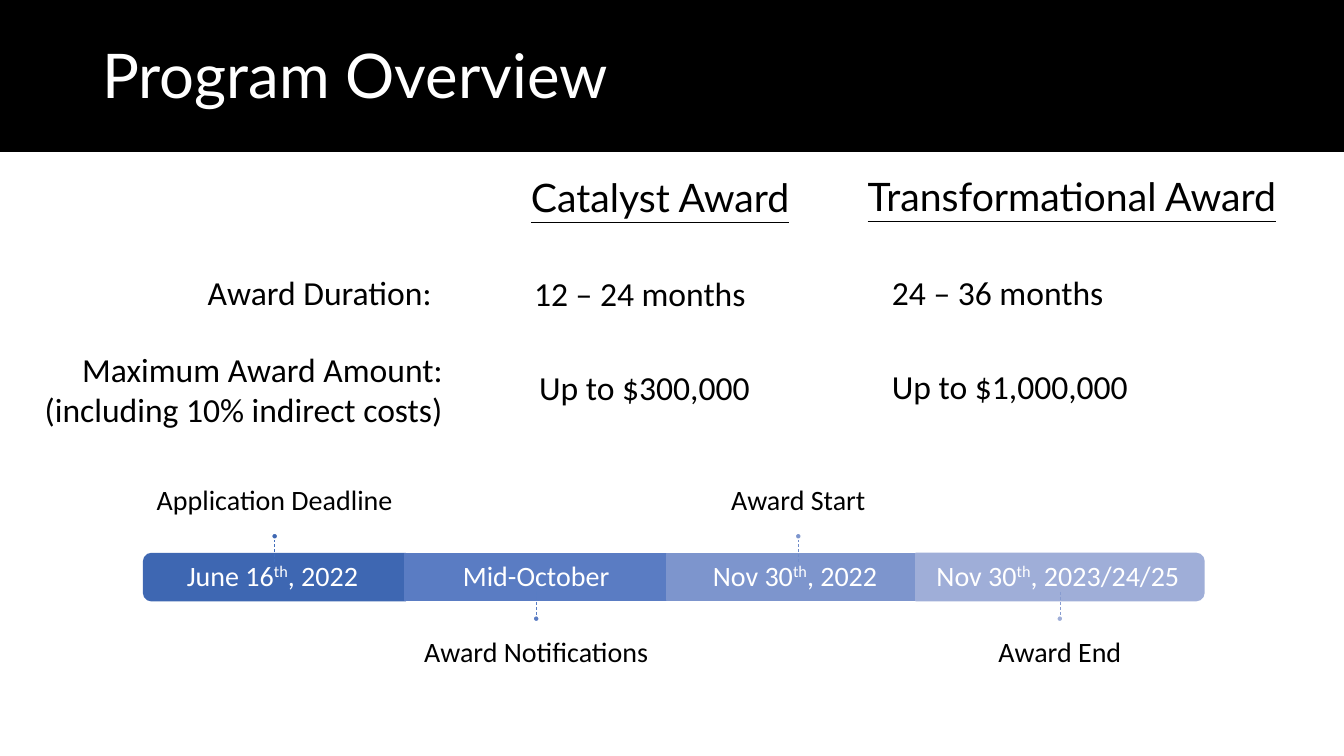
import dataclasses

import lxml.etree
import pptx
import pptx.dml.color
import pptx.enum.dml
import pptx.enum.shapes
import pptx.enum.text
import pptx.oxml.ns
import pptx.util

Pt = pptx.util.Pt
Align = pptx.enum.text.PP_ALIGN
Anchor = pptx.enum.text.MSO_ANCHOR
Preset = pptx.enum.shapes.MSO_SHAPE

COLOURS = {
    "black": "000000", "white": "FFFFFF",
    "june": "3E67B2", "october": "5A7CC3", "november": "7D95CD", "end": "9FAED8",
    "june_stem": "416DBB", "october_stem": "587CC3",
    "november_stem": "708CC9", "end_stem": "879CD0",
}
BAR_TOP, BAR_HEIGHT = 395.3, 33.8
LABEL_WIDTH, LABEL_HEIGHT = 311.8, 73.4
STEM_LENGTH, DOT_SIZE = 17, 4.3
INSET = 12


@dataclasses.dataclass(frozen=True)
class Frame:
    left: float
    top: float
    width: float
    height: float

    def lengths(self) -> tuple:
        return Pt(self.left), Pt(self.top), Pt(self.width), Pt(self.height)


@dataclasses.dataclass(frozen=True)
class Style:
    size: float = 24
    font: str = "Calibri"
    colour: str = "black"
    underline: bool = False
    align: int = Align.LEFT
    anchor: int = Anchor.TOP
    spacing: float = 1.0
    insets: tuple = (7.2, 3.6, 7.2, 3.6)


@dataclasses.dataclass(frozen=True)
class Milestone:
    """One bar segment; date holds the text before, in and after a superscript."""
    colour: str
    left: float
    width: float
    date: tuple
    date_left: float
    date_width: float
    label: str
    above: bool
    rotation: int = 0


HEADING = Style(28, "Lato", underline=True)
VALUE = Style()
ROW_NAME = Style(align=Align.RIGHT)
DATE = Style(20, colour="white", align=Align.CENTER, anchor=Anchor.MIDDLE,
             spacing=0.9, insets=(INSET,) * 4)
LABEL_ABOVE = Style(20, align=Align.CENTER, anchor=Anchor.BOTTOM,
                    spacing=0.9, insets=(0, 0, 0, INSET))
LABEL_BELOW = Style(20, align=Align.CENTER, spacing=0.9, insets=(0, INSET, 0, 0))

AWARD_TEXTS = [
    (Frame(372.2, 120.2, 209.5, 41), HEADING, ["Catalyst Award"]),
    (Frame(612.7, 119.5, 320.4, 41), HEADING, ["Transformational Award"]),
    (Frame(78.5, 190.8, 236.9, 36), ROW_NAME, ["Award Duration:"]),
    (Frame(22.3, 245.5, 301, 65.5), ROW_NAME,
     ["Maximum Award Amount:", "(including 10% indirect costs)"]),
    (Frame(374.4, 191.5, 195, 36), VALUE, ["12 – 24 months"]),
    (Frame(630, 190.8, 195, 36), VALUE, ["24 – 36 months"]),
    (Frame(378, 258.5, 188, 36), VALUE, ["Up to $300,000"]),
    (Frame(630, 257.8, 223.2, 36), VALUE, ["Up to $1,000,000"]),
]
MILESTONES = [
    Milestone("june", 102.6, 187.2, ("June 16", "th", ", 2022 "), 104.4, 185,
              "Application Deadline", True, 270),
    Milestone("october", 289.4, 187.2, ("Mid-October",), 289.4, 187.2,
              "Award Notifications", False),
    Milestone("november", 476.6, 187.2, ("Nov 30", "th", ", 2022 "), 476.6, 187.2,
              "Award Start", True),
    Milestone("end", 654.1, 205.9, ("Nov 30", "th", ", 2023/24/25"), 653.8, 203.8,
              "Award End", False, 90),
]


def rgb(name: str) -> pptx.dml.color.RGBColor:
    return pptx.dml.color.RGBColor.from_string(COLOURS[name])


def write_text(box, style: Style, paragraphs: list) -> None:
    """Fill a box; each paragraph is a tuple whose second run is superscript."""
    frame = box.text_frame
    frame.word_wrap = True
    frame.auto_size = pptx.enum.text.MSO_AUTO_SIZE.NONE
    frame.vertical_anchor = style.anchor
    (frame.margin_left, frame.margin_top,
     frame.margin_right, frame.margin_bottom) = map(Pt, style.insets)
    for number, pieces in enumerate(paragraphs):
        para = frame.add_paragraph() if number else frame.paragraphs[0]
        para.alignment = style.align
        para.line_spacing = style.spacing
        for position, piece in enumerate(pieces):
            span = para.add_run()
            span.text = piece
            span.font.size = Pt(style.size)
            span.font.name = style.font
            span.font.color.rgb = rgb(style.colour)
            if style.underline:
                span.font.underline = True
            if position == 1:
                span._r.get_or_add_rPr().set("baseline", "30000")


def add_text(page, frame: Frame, style: Style, paragraphs: list) -> None:
    write_text(page.shapes.add_textbox(*frame.lengths()), style, paragraphs)


def add_block(page, preset: int, frame: Frame, fill: str, outline: str):
    block = page.shapes.add_shape(preset, *frame.lengths())
    block.shadow.inherit = False
    block.fill.solid()
    block.fill.fore_color.rgb = rgb(fill)
    block.line.color.rgb = rgb(outline)
    block.line.width = Pt(1)
    return block


def add_stem(page, x: float, top: float, colour: str) -> None:
    stem = page.shapes.add_connector(pptx.enum.shapes.MSO_CONNECTOR.STRAIGHT,
                                     Pt(x), Pt(top), Pt(x), Pt(top + STEM_LENGTH))
    stem.line.color.rgb = rgb(colour)
    stem.line.width = Pt(0.5)
    stem.line.dash_style = pptx.enum.dml.MSO_LINE.DASH
    lxml.etree.SubElement(stem._element.spPr, pptx.oxml.ns.qn("a:effectLst"))


def add_segment(page, item: Milestone) -> None:
    """Draw a bar segment; end segments are upright shapes turned on their side."""
    frame = Frame(item.left, BAR_TOP, item.width, BAR_HEIGHT)
    preset = Preset.RECTANGLE
    if item.rotation:
        shift = (item.width - BAR_HEIGHT) / 2
        frame = Frame(item.left + shift, BAR_TOP - shift, BAR_HEIGHT, item.width)
        preset = Preset.ROUND_2_SAME_RECTANGLE
    segment = add_block(page, preset, frame, item.colour, item.colour)
    segment.rotation = item.rotation


def add_milestone(page, item: Milestone) -> None:
    centre = item.left + item.width / 2
    if item.above:
        label_top, label_style, stem_top = 307.4, LABEL_ABOVE, 385.2
        dot_top = stem_top - DOT_SIZE
    else:
        label_top, label_style, stem_top = 444.2, LABEL_BELOW, 422.8
        dot_top = stem_top + STEM_LENGTH
    add_segment(page, item)
    add_text(page, Frame(item.date_left, BAR_TOP, item.date_width, BAR_HEIGHT),
             DATE, [item.date])
    add_text(page, Frame(centre - LABEL_WIDTH / 2, label_top, LABEL_WIDTH, LABEL_HEIGHT),
             label_style, [(item.label,)])
    add_stem(page, centre, stem_top, item.colour + "_stem")
    add_block(page, Preset.OVAL, Frame(centre - DOT_SIZE / 2, dot_top, DOT_SIZE, DOT_SIZE),
              item.colour, "white")


def add_title(page) -> None:
    band = add_block(page, Preset.RECTANGLE, Frame(0, 0, 960, 108), "black", "black")
    title = page.shapes.title
    title._element.addprevious(band._element)
    title.left, title.top, title.width, title.height = Frame(66, 3.6, 828, 104.4).lengths()
    write_text(title, Style(44, "Lato", "white", anchor=Anchor.MIDDLE, spacing=0.9),
               [("Program Overview",)])


def main() -> None:
    deck = pptx.Presentation()
    deck.slide_width, deck.slide_height = Pt(960), Pt(540)
    page = deck.slides.add_slide(deck.slide_layouts.get_by_name("Title Only"))
    add_title(page)
    for frame, style, lines in AWARD_TEXTS:
        add_text(page, frame, style, [(line,) for line in lines])
    for item in MILESTONES:
        add_milestone(page, item)
    deck.save("out.pptx")


if __name__ == "__main__":
    main()
